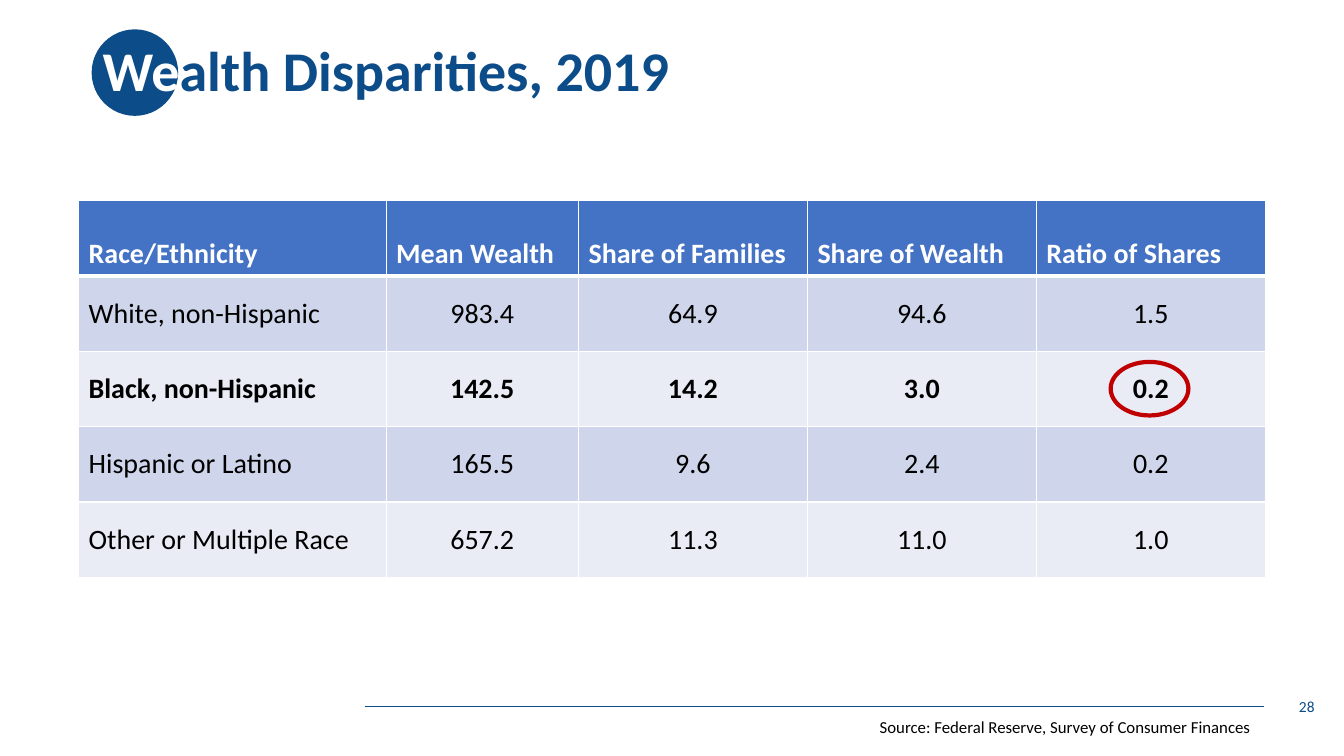
from lxml import etree
from pptx import Presentation
from pptx.dml.color import RGBColor
from pptx.enum.shapes import MSO_CONNECTOR, MSO_SHAPE
from pptx.enum.text import MSO_ANCHOR, PP_ALIGN
from pptx.oxml.ns import qn
from pptx.util import Cm, Pt

LEFT, CENTER, RIGHT = PP_ALIGN.LEFT, PP_ALIGN.CENTER, PP_ALIGN.RIGHT
TOP, MIDDLE, BOTTOM = MSO_ANCHOR.TOP, MSO_ANCHOR.MIDDLE, MSO_ANCHOR.BOTTOM
OVAL, STRAIGHT = MSO_SHAPE.OVAL, MSO_CONNECTOR.STRAIGHT

WHITE = RGBColor(0xFF, 0xFF, 0xFF)
BLACK = RGBColor(0, 0, 0)
NAVY = RGBColor(0x0C, 0x4C, 0x88)
RED = RGBColor(0xC0, 0, 0)
HEADER_BLUE = RGBColor(0x44, 0x72, 0xC4)
BANDS = RGBColor(0xCF, 0xD5, 0xEA), RGBColor(0xE9, 0xEB, 0xF5)

WEALTH = [
    ("Race/Ethnicity", "Mean Wealth", "Share of Families", "Share of Wealth", "Ratio of Shares"),
    ("White, non-Hispanic", "983.4", "64.9", "94.6", "1.5"),
    ("Black, non-Hispanic", "142.5", "14.2", "3.0", "0.2"),
    ("Hispanic or Latino", "165.5", "9.6", "2.4", "0.2"),
    ("Other or Multiple Race", "657.2", "11.3", "11.0", "1.0"),
]
HEADER_ROW, EMPHASIS_ROW = 0, 2
COLUMN_WIDTHS = [7.75, 4.85, 5.77, 5.77, 5.77]
ROW_HEIGHT = 1.9


class SlideBuilder:
    font = "Calibri"

    def __init__(self, slide):
        self.slide = slide

    def add_words(self, paragraph, words, size, color, bold=False):
        run = paragraph.add_run()
        run.text = words
        run.font.name = self.font
        run.font.size = Pt(size)
        run.font.bold = bold
        run.font.color.rgb = color

    def text(self, box, runs, size, align=LEFT, anchor=MIDDLE, bold=False, wrap=True):
        frame = self.slide.shapes.add_textbox(*map(Cm, box)).text_frame
        frame.word_wrap = wrap
        frame.vertical_anchor = anchor
        paragraph = frame.paragraphs[0]
        paragraph.alignment = align
        for words, color in runs:
            self.add_words(paragraph, words, size, color, bold)
        return paragraph

    def rule(self, start, end, color, width):
        line = self.slide.shapes.add_connector(STRAIGHT, *map(Cm, start + end))
        line.line.color.rgb = color
        line.line.width = Pt(width)
        etree.SubElement(line._element.spPr, qn("a:effectLst"))

    def oval(self, box, fill=None, outline=None, width=0):
        oval = self.slide.shapes.add_shape(OVAL, *map(Cm, box))
        oval.shadow.inherit = False
        if fill is None:
            oval.fill.background()
        else:
            oval.fill.solid()
            oval.fill.fore_color.rgb = fill
        if outline is None:
            oval.line.fill.background()
        else:
            oval.line.color.rgb = outline
            oval.line.width = Pt(width)

    def borders(self, cell, widths):
        properties = cell._tc.get_or_add_tcPr()
        for side, width in zip(("lnL", "lnR", "lnT", "lnB"), widths):
            edge = etree.SubElement(properties, qn(f"a:{side}"), w=str(Pt(width)))
            paint = etree.SubElement(edge, qn("a:solidFill"))
            etree.SubElement(paint, qn("a:srgbClr"), val=str(WHITE))

    def table(self, left, top, rows, widths, height, size):
        table = self.slide.shapes.add_table(
            len(rows), len(widths), Cm(left), Cm(top),
            Cm(sum(widths)), Cm(height * len(rows))).table
        for column, width in zip(table.columns, widths):
            column.width = Cm(width)
        for r, values in enumerate(rows):
            table.rows[r].height = Cm(height)
            header = r == HEADER_ROW
            for c, value in enumerate(values):
                cell = table.cell(r, c)
                self.borders(cell, (1, 1, 3 if r == HEADER_ROW + 1 else 1, 3 if header else 1))
                cell.fill.solid()
                cell.fill.fore_color.rgb = HEADER_BLUE if header else BANDS[(r - 1) % 2]
                cell.vertical_anchor = BOTTOM if header else MIDDLE
                paragraph = cell.text_frame.paragraphs[0]
                paragraph.alignment = LEFT if header or c == 0 else CENTER
                self.add_words(paragraph, value, size, WHITE if header else BLACK,
                               header or r == EMPHASIS_ROW)


def main():
    deck = Presentation()
    deck.slide_width, deck.slide_height = Cm(33.87), Cm(19.05)
    page = SlideBuilder(deck.slides.add_slide(deck.slide_layouts[6]))

    page.rule((9.19, 17.81), (31.85, 17.81), NAVY, 0.5)
    page.oval((2.31, 0.74, 2.18, 2.18), fill=NAVY)
    title = page.text((2.34, 0, 29.21, 3.68),
                      [("We", WHITE), ("alth Disparities, 2019", NAVY)], 40, bold=True)
    title.line_spacing = 0.9
    page.table(1.98, 5.05, WEALTH, COLUMN_WIDTHS, ROW_HEIGHT, 20)
    page.text((25.76, 17.3, 7.62, 1.02), [("28", NAVY)], 11, align=RIGHT)
    page.oval((27.99, 9.12, 1.96, 1.35), outline=RED, width=3)
    page.text((21.92, 17.93, 9.96, 0.76),
              [("Source: Federal Reserve, Survey of Consumer Finances", BLACK)],
              12, anchor=TOP, wrap=False)
    deck.save("out.pptx")


if __name__ == "__main__":
    main()
